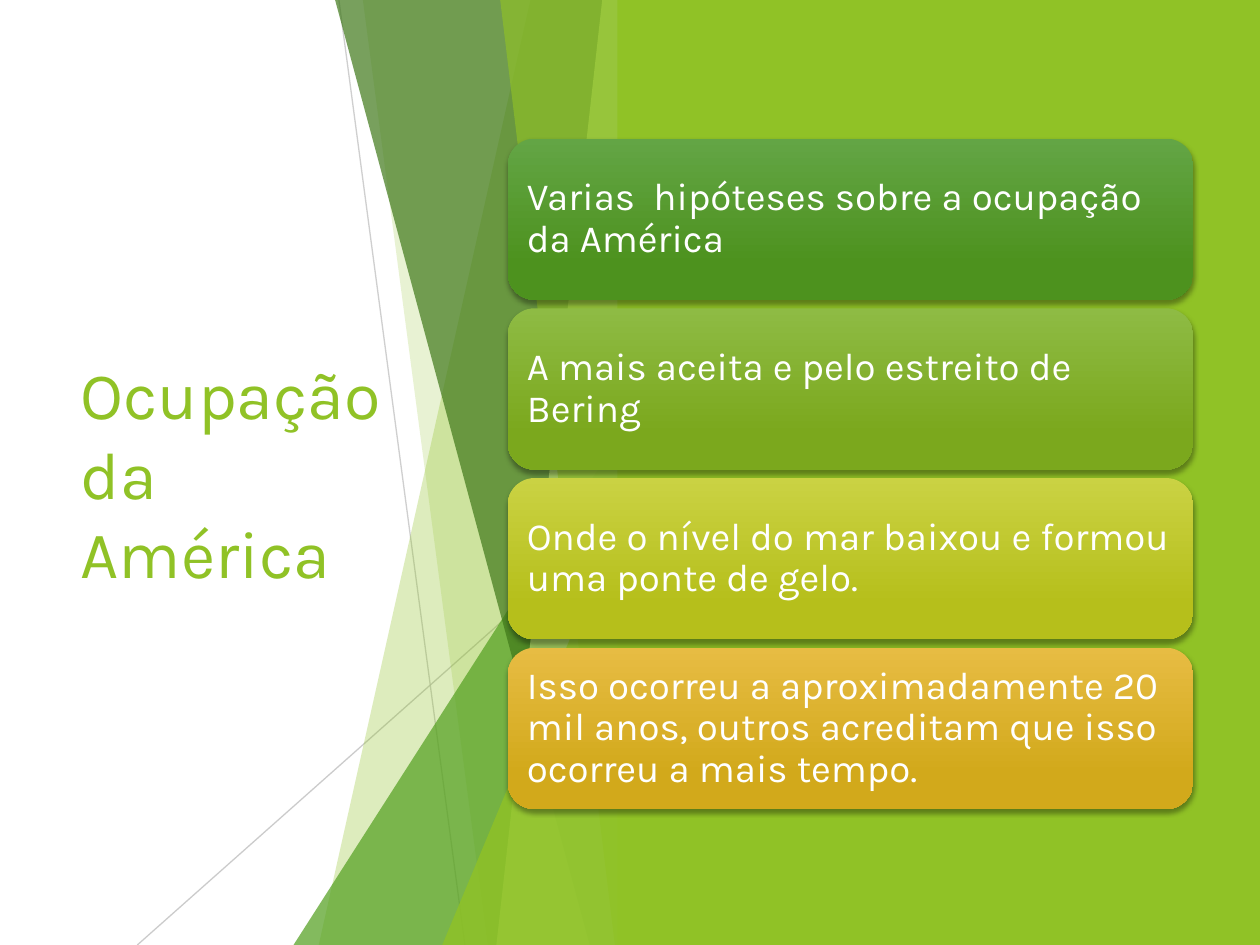
from lxml import etree
from pptx import Presentation, util as u
from pptx.dml.color import RGBColor
from pptx.enum import shapes, text
from pptx.oxml.ns import qn

COLS, ROWS = 100, 75
FONT = "Karla"
INK = {"lime": "90C226", "green": "54A021", "dark": "3F7819",
       "pale": "C0E474", "grey": "BFBFBF", "white": "FFFFFF", "black": "000000"}
EDGE = 50  # column where the facets meet the panel

CARDS = [
    ("Varias  hipóteses sobre a ocupação da América", "63A545", "4D921E"),
    ("A mais aceita e pelo estreito de Bering", "8EBB44", "7BA81D"),
    ("Onde o nível do mar baixou e formou uma ponte de gelo.", "CAD243", "B6BF1B"),
    ("Isso ocorreu a aproximadamente 20 mil anos, outros acreditam "
     "que isso ocorreu a mais tempo.", "E7BC43", "D2A91B"),
]


def rgb(code):
    return RGBColor.from_string(code)


def fade(part, share):
    """Make the solid colour inside part share percent opaque."""
    tone = next(part.iter(qn("a:srgbClr")))
    etree.SubElement(tone, qn("a:alpha"), val=str(share * 1000))


class Deck:
    """Holds the style and the current slide; lengths are grid cells."""

    def __init__(self):
        self.prs = Presentation()
        self.prs.slide_width, self.prs.slide_height = u.Inches(10), u.Inches(7.5)
        self.slide = self.prs.slides.add_slide(self.prs.slide_layouts[5])
        self.items = self.slide.shapes

    def x(self, col):
        return round(self.prs.slide_width * col / COLS)

    def y(self, row):
        return round(self.prs.slide_height * row / ROWS)

    def box(self, col, row, wide, high):
        return self.x(col), self.y(row), self.x(wide), self.y(high)

    def title(self, words, *cells):
        item = self.items.title
        item.left, item.top, item.width, item.height = self.box(*cells)
        frame = item.text_frame
        frame.auto_size = text.MSO_AUTO_SIZE.NONE
        frame.margin_right = self.x(2)
        self.label(frame, words, 38, INK["lime"])

    def label(self, frame, words, size, ink):
        frame.text = words
        frame.word_wrap = True
        frame.vertical_anchor = text.MSO_ANCHOR.MIDDLE
        para = frame.paragraphs[0]
        para.alignment = text.PP_ALIGN.LEFT
        para.font.name, para.font.size = FONT, u.Pt(size)
        para.font.color.rgb = rgb(ink)
        return para

    def paint(self, item, ink, share=100):
        item.shadow.inherit = False
        item.line.fill.background()
        item.fill.solid()
        item.fill.fore_color.rgb = rgb(INK[ink])
        if share < 100:
            fade(item._element.spPr, share)

    def line(self, x1, y1, x2, y2, share):
        item = self.items.add_connector(
            shapes.MSO_CONNECTOR.STRAIGHT, self.x(x1), self.y(y1), self.x(x2), self.y(y2))
        item.line.color.rgb = rgb(INK["grey"])
        item.line.width = u.Pt(0.75)
        props = item._element.spPr
        fade(props, share)
        etree.SubElement(props, qn("a:effectLst"))

    def facet(self, top, foot, ink, share):
        """Full-height band from a slanted left side to the panel edge."""
        shape = self.items.build_freeform(self.x(top), 0, scale=1.0)
        shape.add_line_segments([(self.x(EDGE), 0), (self.x(EDGE), self.y(ROWS)),
                                 (self.x(foot), self.y(ROWS))])
        self.paint(shape.convert_to_shape(), ink, share)

    def wedge(self, col, row, ink, share):
        """Right triangle standing in the corner below the panel edge."""
        item = self.items.add_shape(
            shapes.MSO_SHAPE.ISOSCELES_TRIANGLE,
            *self.box(col, row, EDGE - col, ROWS - row))
        item.adjustments[0] = 1
        self.paint(item, ink, share)

    def panel(self, *cells):
        item = self.items.add_shape(shapes.MSO_SHAPE.RECTANGLE, *self.box(*cells))
        self.paint(item, "lime")

    def card(self, words, light, deep, *cells):
        item = self.items.add_shape(shapes.MSO_SHAPE.ROUNDED_RECTANGLE, *self.box(*cells))
        item.line.fill.background()
        item.fill.gradient()
        item.fill.gradient_angle = 270
        for stop, spot, code in zip(item.fill.gradient_stops, (0, 0.78), (light, deep)):
            stop.position, stop.color.rgb = spot, rgb(code)
        self.shade(item)
        frame = item.text_frame
        frame.margin_left = frame.margin_right = self.x(0.9)
        frame.margin_top = frame.margin_bottom = self.y(0.9)
        self.label(frame, words, 22, INK["white"]).line_spacing = 0.9

    def shade(self, item):
        """Give item a soft shadow straight below it."""
        item.shadow.inherit = False
        drop = etree.SubElement(
            item._element.spPr.find(qn("a:effectLst")), qn("a:outerShdw"),
            blurRad=str(u.Pt(3)), dist=str(u.Pt(2)), dir="5400000", rotWithShape="0")
        etree.SubElement(drop, qn("a:srgbClr"), val=INK["black"])
        fade(drop, 35)


def main():
    deck = Deck()
    deck.title("Ocupação da América", 5.4, 15.1, 29.1, 44.8)

    deck.line(26.9, 0, 36.9, ROWS, 75)
    deck.line(EDGE, 40.3, 10.9, ROWS, 80)
    deck.facet(42.1, 25.3, "lime", 30)
    deck.facet(28.8, 38.7, "lime", 20)
    deck.wedge(23.3, 33.3, "green", 72)
    deck.facet(26.6, 46.8, "dark", 70)
    deck.facet(47.8, 39.4, "pale", 70)
    deck.facet(39.7, 48.8, "lime", 65)
    deck.wedge(35.1, 39.3, "lime", 80)
    deck.panel(49, 0, 51, ROWS)

    for i, (words, light, deep) in enumerate(CARDS):
        deck.card(words, light, deep, 40.3, 11 + 13.47 * i, 54.4, 12.8)

    deck.prs.save("out.pptx")


if __name__ == "__main__":
    main()
